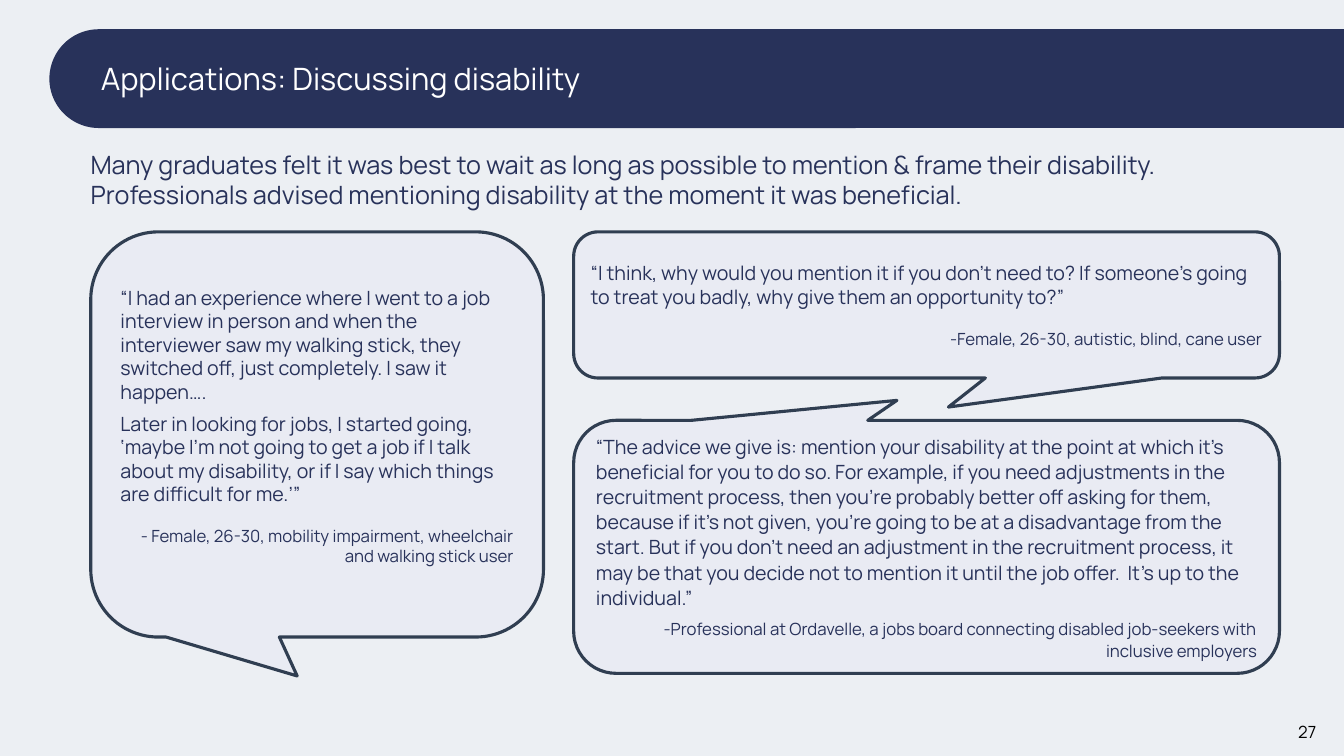
from pptx import Presentation
from pptx.dml.color import RGBColor
from pptx.enum.shapes import MSO_SHAPE as Preset
from pptx.enum.text import MSO_ANCHOR as Anchor, MSO_AUTO_SIZE as AutoSize, PP_ALIGN as Align
from pptx.oxml.ns import qn
from pptx.util import Inches, Pt
from lxml.etree import SubElement

NAVY, SLATE, LILAC = "28325A", "303E51", "D4C8FC"
WHITE, BLACK, PALE = "FFFFFF", "000000", "ECEFF3"
FONT = "Manrope"


def paint(fill, color, opacity=100):
    """Give a fill a solid colour with an opacity in percent."""
    fill.solid()
    fill.fore_color.rgb = RGBColor.from_string(color)
    if opacity < 100:
        for color_node in fill._xPr.iter(qn("a:srgbClr")):
            SubElement(color_node, qn("a:alpha")).set("val", str(opacity * 1000))


def write(paragraph, text, size=14, color=NAVY, align=Align.LEFT, before=0, after=0, spacing=1.0):
    """Put formatted text in a paragraph."""
    paragraph.alignment = align
    paragraph.space_before, paragraph.space_after = Pt(before), Pt(after)
    paragraph.line_spacing = spacing
    run = paragraph.add_run()
    run.text = text
    run.font.name, run.font.size = FONT, Pt(size)
    run.font.color.rgb = RGBColor.from_string(color)


def set_frame(frame, anchor):
    """Make a text frame wrap, keep its size and use an anchor."""
    frame.word_wrap = True
    frame.auto_size = AutoSize.NONE
    frame.vertical_anchor = anchor


def add_label(slide, box, text, anchor=Anchor.TOP, **style):
    """Add a text box with one paragraph."""
    frame = slide.shapes.add_textbox(*map(Inches, box)).text_frame
    set_frame(frame, anchor)
    write(frame.paragraphs[0], text, **style)


def add_header(slide, text):
    """Place the title on a rounded bar that runs off the right edge."""
    title = slide.shapes.title
    bar = slide.shapes.add_shape(
        Preset.ROUNDED_RECTANGLE, Inches(0.49), Inches(0.29), Inches(13.47), Inches(0.98))
    bar.adjustments[0] = 0.5
    bar.shadow.inherit = False
    paint(bar.fill, NAVY)
    bar.line.fill.background()
    title.element.addprevious(bar.element)
    title.left, title.top, title.width, title.height = map(Inches, (0.9, 0.53, 12.43, 0.5))
    set_frame(title.text_frame, Anchor.MIDDLE)
    write(title.text_frame.paragraphs[0], text, size=22, color=WHITE)


def add_quote(slide, box, tail, paragraphs, bottom=0.05):
    """Add a speech bubble holding (text, format) paragraphs."""
    bubble = slide.shapes.add_shape(Preset.ROUNDED_RECTANGULAR_CALLOUT, *map(Inches, box))
    for index, value in enumerate((*tail, 0.167)):
        bubble.adjustments[index] = value
    bubble.shadow.inherit = False
    paint(bubble.fill, LILAC, opacity=10)
    paint(bubble.line.fill, SLATE)
    bubble.line.width = Pt(2.25)
    frame = bubble.text_frame
    set_frame(frame, Anchor.MIDDLE)
    frame.margin_bottom = Inches(bottom)
    for index, (text, style) in enumerate(paragraphs):
        paragraph = frame.add_paragraph() if index else frame.paragraphs[0]
        write(paragraph, text, **style)


def main():
    """Build and save the slide."""
    deck = Presentation()
    deck.slide_width, deck.slide_height = Inches(13.33), Inches(7.5)
    slide = deck.slides.add_slide(deck.slide_layouts[5])
    paint(slide.background.fill, PALE)

    add_header(slide, "Applications: Discussing disability")
    add_label(
        slide, (0.8, 1.43, 11.89, 0.71),
        "Many graduates felt it was best to wait as long as possible to mention & frame their "
        "disability. Professionals advised mentioning disability at the moment it was beneficial.",
        size=18)

    speaker = dict(size=12, align=Align.RIGHT)
    spaced_speaker = dict(speaker, before=14.4)
    advice = dict(spacing=1.07, after=6)

    add_quote(slide, (0.9, 2.3, 4.49, 4.02), (-0.044, 0.596), [
        ("“I had an experience where I went to a job interview in person and when the interviewer "
         "saw my walking stick, they switched off, just completely. I saw it happen….", {}),
        ("Later in looking for jobs, I started going, ‘maybe I'm not going to get a job if I talk "
         "about my disability, or if I say which things are difficult for me.’”", dict(before=6)),
        ("- Female, 26-30, mobility impairment, wheelchair and walking stick user", spaced_speaker),
    ], bottom=0.22)
    add_quote(slide, (5.69, 2.3, 7, 1.45), (0.031, 0.699), [
        ("“I think, why would you mention it if you don't need to? If someone's going to treat you "
         "badly, why give them an opportunity to?”", {}),
        ("-Female, 26-30, autistic, blind, cane user", spaced_speaker),
    ])
    add_quote(slide, (5.69, 4.17, 7, 2.51), (-0.042, -0.579), [
        ("“The advice we give is: mention your disability at the point at which it's beneficial "
         "for you to do so. For example, if you need adjustments in the recruitment process, then "
         "you're probably better off asking for them, because if it's not given, you're going to "
         "be at a disadvantage from the start. But if you don't need an adjustment in the "
         "recruitment process, it may be that you decide not to mention it until the job offer.  "
         "It’s up to the individual.”", advice),
        ("-Professional at Ordavelle, a jobs board connecting disabled job-seekers with inclusive "
         "employers", {**speaker, **advice}),
    ])

    add_label(slide, (12.69, 7.1, 0.55, 0.32), "27", anchor=Anchor.MIDDLE,
              size=12, color=BLACK, align=Align.CENTER)
    deck.save("out.pptx")


if __name__ == "__main__":
    main()
